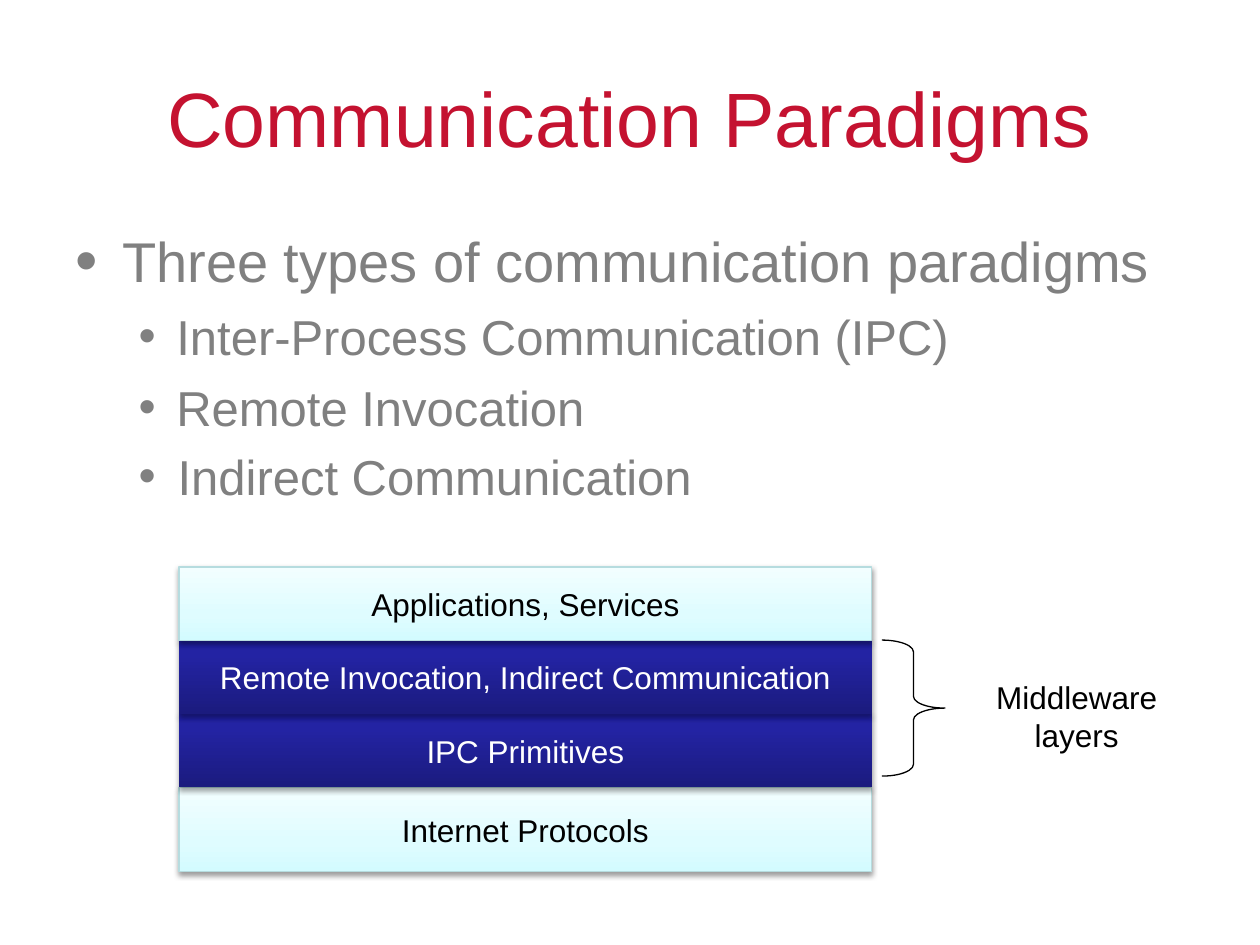
from lxml import etree
from pptx import Presentation
from pptx.dml.color import RGBColor
from pptx.enum import shapes, text
from pptx.oxml.ns import qn
from pptx.util import Inches, Pt

FONT = "Arial"
RED = RGBColor(0xC4, 0x12, 0x30)
GREY = RGBColor(0x80, 0x80, 0x80)
BLACK = RGBColor(0, 0, 0)
WHITE = RGBColor(0xFF, 0xFF, 0xFF)
EDGE = RGBColor(0xB6, 0xDC, 0xDF)
# Gradient stops: percent along the fill and colour
PALE = [(0, RGBColor(0xD3, 0xFB, 0xFF)), (35, RGBColor(0xDF, 0xFC, 0xFF)),
        (100, RGBColor(0xF2, 0xFE, 0xFF))]
NAVY = [(0, RGBColor(0x1B, 0x1B, 0x7E)), (80, RGBColor(0x23, 0x23, 0xA3)),
        (100, RGBColor(0x20, 0x20, 0xA6))]


def node(root, tag, **attrs):
    return etree.SubElement(root, qn(tag), {k: str(v) for k, v in attrs.items()})


def write(para, words, size=18, color=BLACK, align=text.PP_ALIGN.CENTER):
    para.alignment = align
    run = para.add_run()
    run.text = words
    run.font.name, run.font.size = FONT, Pt(size)
    run.font.color.rgb = color


def place(shape, box):
    shape.left, shape.top, shape.width, shape.height = (Inches(v) for v in box)


def bullet(para, left, hang, scale):
    props = para._p.get_or_add_pPr()
    props.set("marL", str(Inches(left)))
    props.set("indent", str(-Inches(hang)))
    node(node(props, "a:buClr"), "a:srgbClr", val=GREY)
    node(props, "a:buSzPct", val=scale * 1000)
    node(props, "a:buFont", typeface=FONT)
    node(props, "a:buChar", char="•")


def shade(shape, stops):
    shape.fill.gradient()
    shape.fill.gradient_angle = 90
    ramp = shape._element.spPr.find(".//" + qn("a:gsLst"))
    for old in list(ramp):
        ramp.remove(old)
    for pos, color in stops:
        node(node(ramp, "a:gs", pos=pos * 1000), "a:srgbClr", val=color)


def shadow(shape, alpha, dist):
    shape.shadow.inherit = False
    effects = shape._element.spPr.find(qn("a:effectLst"))
    outer = node(effects, "a:outerShdw", blurRad=Pt(3.1), dist=Pt(dist),
                 dir=90 * 60000, rotWithShape=0)
    node(node(outer, "a:srgbClr", val=BLACK), "a:alpha", val=alpha * 1000)


def title(slide, box):
    shape = slide.shapes.title
    place(shape, box)
    shape.text_frame.vertical_anchor = text.MSO_ANCHOR.MIDDLE
    write(shape.text_frame.paragraphs[0], "Communication Paradigms", size=44, color=RED)


def body(slide, box):
    shape = slide.placeholders[1]
    place(shape, box)
    frame = shape.text_frame
    frame.auto_size = text.MSO_AUTO_SIZE.NONE
    # Words, level, size, space before, left indent, hanging indent, bullet scale
    items = [
        ("Three types of communication paradigms", 0, 32, 0, 0.37, 0.37, 114),
        ("Inter-Process Communication (IPC)", 1, 28, 7, 0.8, 0.3, 100),
        ("Remote Invocation", 1, 28, 7, 0.8, 0.3, 100),
        ("Indirect Communication", 1, 28, 5.6, 0.81, 0.31, 100),
    ]
    for i, (words, level, size, gap, left, hang, scale) in enumerate(items):
        para = frame.add_paragraph() if i else frame.paragraphs[0]
        bullet(para, left, hang, scale)
        para.level = level
        para.space_before = Pt(gap)
        write(para, words, size=size, color=GREY, align=text.PP_ALIGN.LEFT)


def layer(slide, box, words, dark):
    shape = slide.shapes.add_shape(shapes.MSO_SHAPE.RECTANGLE, *map(Inches, box))
    shade(shape, NAVY if dark else PALE)
    if dark:
        shape.line.fill.background()
        shadow(shape, 35, 1.8)
    else:
        shape.line.color.rgb = EDGE
        shape.line.width = Pt(0.75)
        shadow(shape, 38, 1.6)
    shape.text_frame.vertical_anchor = text.MSO_ANCHOR.MIDDLE
    write(shape.text_frame.paragraphs[0], words, color=WHITE if dark else BLACK)


def stack(slide, box):
    left, top, width, height = box
    names = [("Applications, Services", False),
             ("Remote Invocation, Indirect Communication", True),
             ("IPC Primitives", True),
             ("Internet Protocols", False)]
    base = 0.67  # the bottom layer is taller than the rest
    step = (height - base) / (len(names) - 1)
    # Bottom layer first, so that each one casts its shadow on the next below
    for i, (words, dark) in reversed(list(enumerate(names))):
        tall = base if i == len(names) - 1 else step
        layer(slide, (left, top + i * step, width, tall), words, dark)


def note(slide, box):
    left, top, width, height = box
    # Brace around the middle layers
    brace = slide.shapes.add_shape(shapes.MSO_SHAPE.RIGHT_BRACE,
                                   *map(Inches, (left, top, 0.5, height)))
    brace.adjustments[0], brace.adjustments[1] = 0.187, 0.5
    brace.fill.background()
    brace.line.color.rgb = BLACK
    brace.line.width = Pt(0.75)
    brace.shadow.inherit = False
    # Label
    label = slide.shapes.add_textbox(
        *map(Inches, (left + 0.67, top + 0.25, width - 0.67, 0.71)))
    label.text_frame.word_wrap = True
    label.text_frame.auto_size = text.MSO_AUTO_SIZE.SHAPE_TO_FIT_TEXT
    write(label.text_frame.paragraphs[0], "Middleware layers")


def main():
    deck = Presentation()
    deck.slide_width, deck.slide_height = Inches(10), Inches(7.5)
    slide = deck.slides.add_slide(deck.slide_layouts[1])
    title(slide, (0.5, 0.3, 9, 1.25))
    body(slide, (0.5, 1.75, 9, 4.95))
    stack(slide, (1.42, 4.5, 5.5, 2.42))
    note(slide, (7, 5.08, 2.42, 1.08))
    deck.save("out.pptx")


if __name__ == "__main__":
    main()
